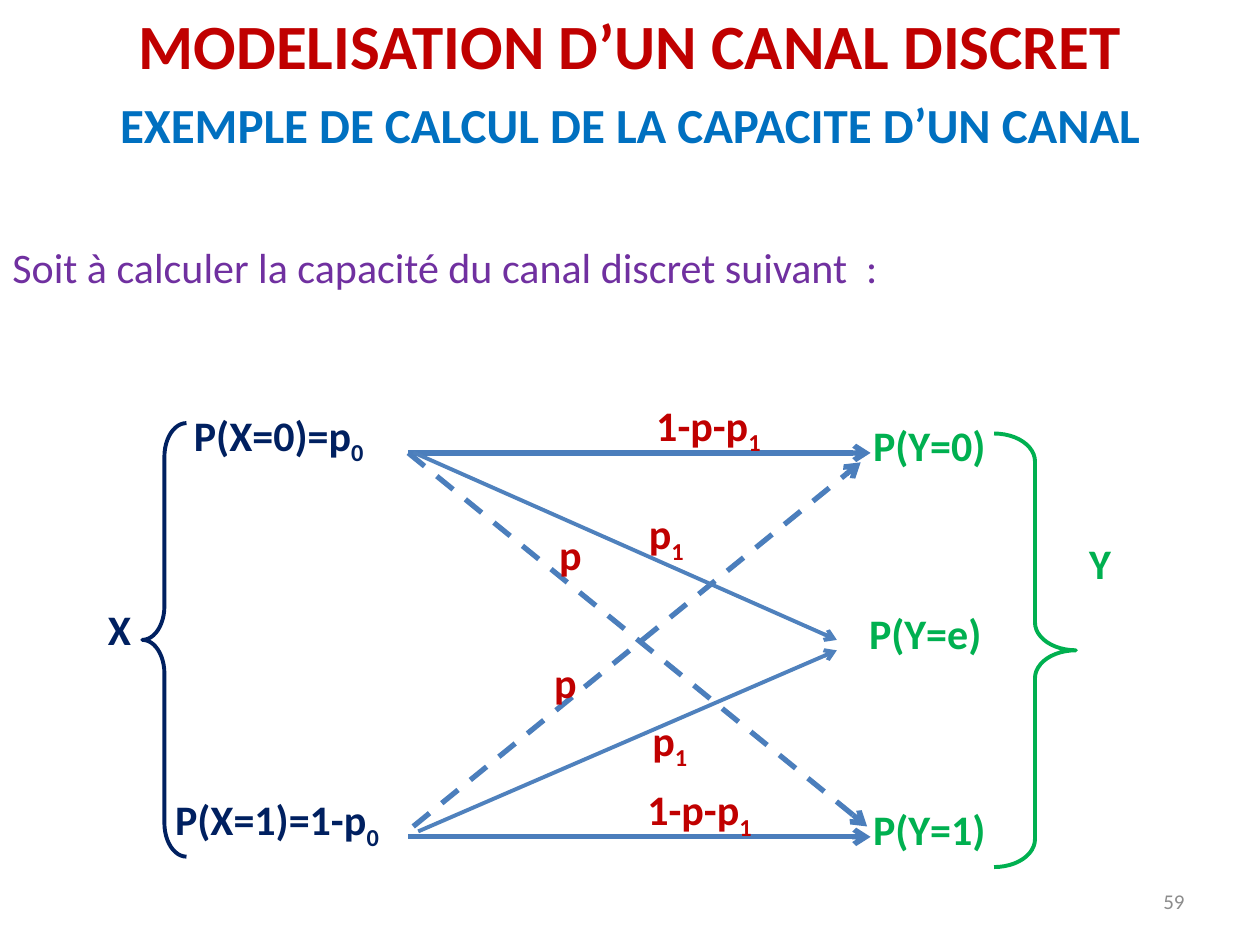
from dataclasses import dataclass

from lxml.etree import SubElement
from pptx import Presentation
from pptx.dml.color import RGBColor as Rgb
from pptx.enum.dml import MSO_LINE as Dash
from pptx.enum.shapes import MSO_CONNECTOR as Link, MSO_SHAPE as Form
from pptx.enum.text import MSO_ANCHOR as Anchor, PP_ALIGN as Align
from pptx.oxml.ns import qn
from pptx.util import Cm, Pt


@dataclass(frozen=True)
class Theme:
    font: str = "Calibri"
    red: str = "C00000"
    blue: str = "0070C0"
    purple: str = "7030A0"
    navy: str = "002060"
    green: str = "00B050"
    grey: str = "8C8C8C"
    bold_line: str = "4B7EBC"
    thin_line: str = "4F81BD"
    title: int = 36
    head: int = 28
    body: int = 24
    small: int = 12
    thick: float = 3
    thin: float = 2.25


T = Theme()


def add_text(slide, text, box, color, sub="", size=T.body, bold=True,
             align=Align.LEFT, anchor=Anchor.TOP, after=0):
    """Place a text box; sub is a subscript set after the text."""
    frame = slide.shapes.add_textbox(*map(Cm, box)).text_frame
    frame.word_wrap = True
    frame.vertical_anchor = anchor
    para = frame.paragraphs[0]
    para.alignment = align
    para.space_after = Pt(after)
    for part, base in ((text, None), (sub, "-25000")):
        if not part:
            continue
        run = para.add_run()
        run.text = part
        font = run.font
        font.name, font.size, font.bold = T.font, Pt(size), bold
        font.color.rgb = Rgb.from_string(color)
        if base:
            run._r.get_or_add_rPr().set("baseline", base)


def add_arrow(slide, start, end, color=T.bold_line, width=T.thick, dash=None):
    arrow = slide.shapes.add_connector(Link.STRAIGHT, *map(Cm, start + end))
    line = arrow.line
    line.color.rgb = Rgb.from_string(color)
    line.width = Pt(width)
    if dash:
        line.dash_style = dash
    SubElement(line._get_or_add_ln(), qn("a:tailEnd"), type="arrow")
    SubElement(arrow._element.spPr, qn("a:effectLst"))


def add_brace(slide, form, box, color, curve):
    brace = slide.shapes.add_shape(form, *map(Cm, box))
    brace.shadow.inherit = False
    brace.adjustments[0] = curve
    brace.adjustments[1] = 0.5
    brace.fill.background()
    brace.line.color.rgb = Rgb.from_string(color)
    brace.line.width = Pt(T.thin)


def add_heads(slide):
    add_text(slide, "MODELISATION D’UN CANAL DISCRET", (0, 0, 25.4, 1.8),
             T.red, size=T.title, align=Align.CENTER)
    add_text(slide, "EXEMPLE DE CALCUL DE LA CAPACITE D’UN CANAL",
             (0, 1.78, 25.4, 2.24), T.blue, size=T.head, align=Align.CENTER)
    add_text(slide, "Soit à calculer la capacité du canal discret suivant  :",
             (0, 4.75, 25.4, 1.27), T.purple, bold=False)
    add_text(slide, "59", (18.21, 17.65, 5.92, 1.02), T.grey, size=T.small,
             bold=False, align=Align.RIGHT, anchor=Anchor.MIDDLE)


def add_paths(slide):
    left, right, top, low = 8.23, 17.55, 9.13, 16.87
    # Correct transmission
    for y in (top, low):
        add_arrow(slide, (left, y), (right, y))
    # Errors
    add_arrow(slide, (8.33, 16.66), (17.35, 9.32), dash=Dash.DASH)
    add_arrow(slide, (left, top), (17.48, 16.66), dash=Dash.DASH)
    # Erasures
    for start, end in (((8.33, 9.12), (16.87, 12.9)),
                       ((8.43, 16.76), (16.87, 13.11))):
        add_arrow(slide, start, end, color=T.thin_line, width=T.thin)


def add_labels(slide):
    # Input and output names
    add_text(slide, "X", (1.47, 12.04, 1.88, 1.45), T.navy,
             align=Align.CENTER, after=10)
    add_text(slide, "Y", (21.03, 10.72, 2.29, 1.65), T.green,
             align=Align.CENTER, after=10)
    # Text, subscript, left, top, width, height, colour
    labels = (
        ("P(X=0)=p", "0", 3.66, 8.13, 5.16, 1.78, T.navy),
        ("P(X=1)=1-p", "0", 3.28, 15.88, 5.16, 1.78, T.navy),
        ("P(Y=0)", "", 17.35, 8.33, 5.56, 1.6, T.green),
        ("P(Y=e)", "", 17.27, 12.12, 5.56, 1.6, T.green),
        ("P(Y=1)", "", 17.35, 16.08, 5.16, 1.19, T.green),
        ("1-p-p", "1", 12.98, 7.92, 2.92, 1.6, T.red),
        ("1-p-p", "1", 12.8, 15.67, 2.92, 1.6, T.red),
        ("p", "", 11.02, 10.52, 2.06, 1.4, T.red),
        ("p", "", 10.92, 13.11, 2.06, 1.4, T.red),
        ("p", "1", 12.83, 10.11, 2.06, 1.4, T.red),
        ("p", "1", 12.9, 14.27, 2.06, 1.4, T.red),
    )
    for text, sub, *box, color in labels:
        add_text(slide, text, box, color, sub=sub, after=10)


def main():
    deck = Presentation()
    deck.slide_width, deck.slide_height = Cm(25.4), Cm(19.05)
    slide = deck.slides.add_slide(deck.slide_layouts[6])
    add_heads(slide)
    add_paths(slide)
    add_brace(slide, Form.LEFT_BRACE, (2.87, 8.53, 0.89, 8.74), T.navy, 0.76)
    add_brace(slide, Form.RIGHT_BRACE, (20.04, 8.74, 1.65, 8.74), T.green, 0.34)
    add_labels(slide)
    deck.save("out.pptx")


if __name__ == "__main__":
    main()
